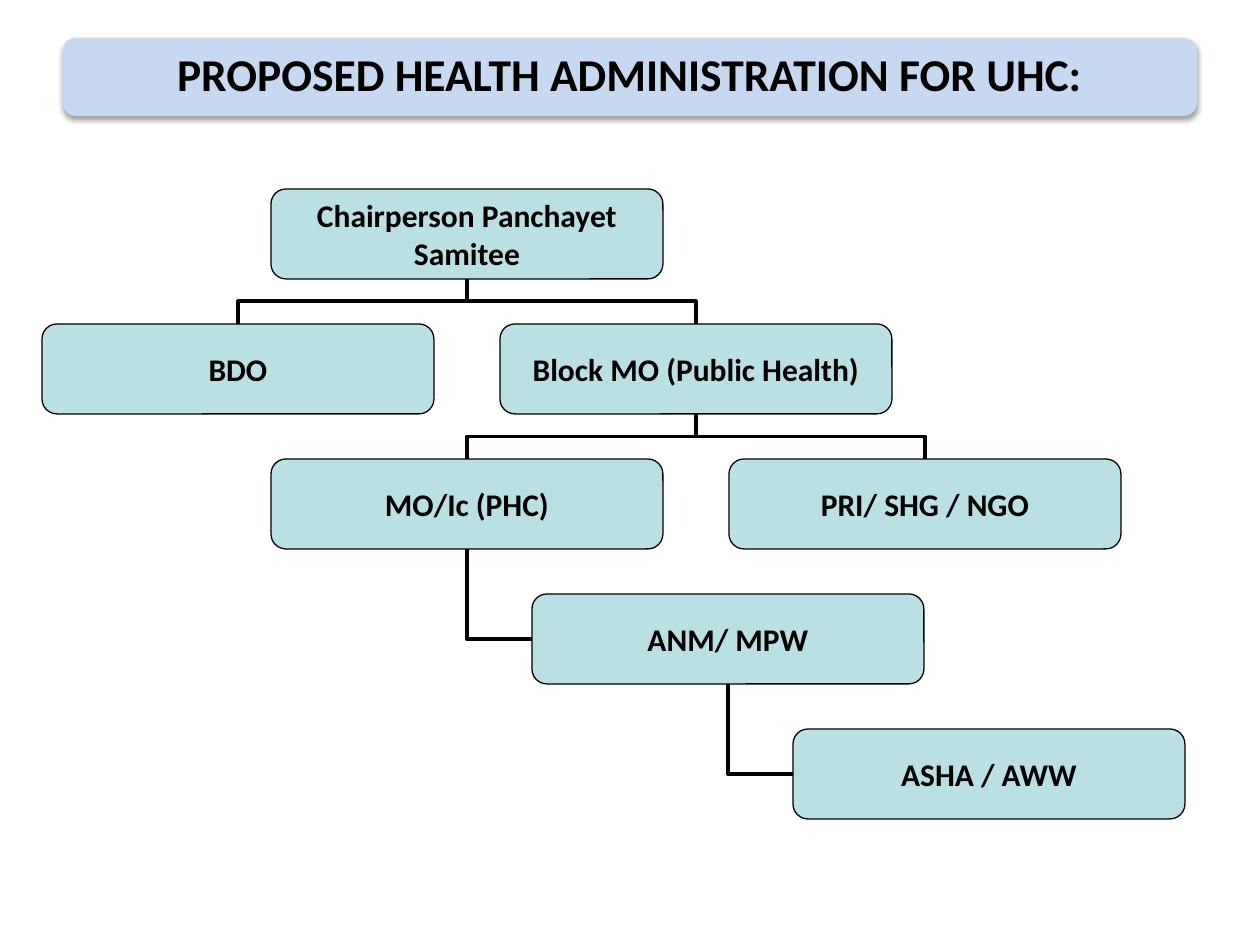
import dataclasses

import lxml.etree
import pptx
import pptx.dml.color
import pptx.enum.shapes
import pptx.enum.text
import pptx.oxml.ns
import pptx.util

EMU_PER_PX = 914400 / 126


@dataclasses.dataclass(frozen=True)
class Theme:
    font: str = "Calibri"
    ink: str = "000000"
    banner: str = "C6D9F1"
    role: str = "BBE0E3"
    title_size: int = 26
    role_size: int = 18
    outline: float = 0.75
    link: float = 2.25


THEME = Theme()
ROLE_WIDTH, ROLE_HEIGHT = 392, 90
FIRST_LEFT, COLUMN_STEP = 42, 229
FIRST_TOP, ROW_STEP = 189, 135
HANGING_INDENT = ROLE_WIDTH // 2 + 65
MIDDLE_COLUMN = FIRST_LEFT + COLUMN_STEP

ROLES = [
    ("Chairperson Panchayet Samitee", MIDDLE_COLUMN, 0),
    ("BDO", FIRST_LEFT, 1),
    ("Block MO (Public Health)", FIRST_LEFT + 2 * COLUMN_STEP, 1),
    ("MO/Ic (PHC)", MIDDLE_COLUMN, 2),
    ("PRI/ SHG / NGO", FIRST_LEFT + 3 * COLUMN_STEP, 2),
    ("ANM/ MPW", MIDDLE_COLUMN + HANGING_INDENT, 3),
    ("ASHA / AWW", MIDDLE_COLUMN + 2 * HANGING_INDENT, 4),
]
BRANCHES = [
    ("Chairperson Panchayet Samitee", "BDO"),
    ("Chairperson Panchayet Samitee", "Block MO (Public Health)"),
    ("Block MO (Public Health)", "MO/Ic (PHC)"),
    ("Block MO (Public Health)", "PRI/ SHG / NGO"),
]
HANGING = [("MO/Ic (PHC)", "ANM/ MPW"), ("ANM/ MPW", "ASHA / AWW")]


def px(length):
    return pptx.util.Emu(round(length * EMU_PER_PX))


def color(value):
    return pptx.dml.color.RGBColor.from_string(value)


def write(shape, text, size, inset):
    frame = shape.text_frame
    frame.text = text
    frame.word_wrap = True
    frame.auto_size = pptx.enum.text.MSO_AUTO_SIZE.NONE
    frame.vertical_anchor = pptx.enum.text.MSO_ANCHOR.MIDDLE
    frame.margin_left = frame.margin_right = px(inset)
    frame.margin_top = frame.margin_bottom = px(inset)
    paragraph = frame.paragraphs[0]
    paragraph.alignment = pptx.enum.text.PP_ALIGN.CENTER
    font = paragraph.runs[0].font
    font.name = THEME.font
    font.size = pptx.util.Pt(size)
    font.bold = True
    font.color.rgb = color(THEME.ink)


def add_panel(slide, left, top, width, height, fill):
    panel = slide.shapes.add_shape(
        pptx.enum.shapes.MSO_SHAPE.ROUNDED_RECTANGLE,
        px(left), px(top), px(width), px(height))
    panel.shadow.inherit = False
    panel.fill.solid()
    panel.fill.fore_color.rgb = color(fill)
    return panel


def add_banner_shadow(banner):
    tag = pptx.oxml.ns.qn
    effects = banner._element.spPr.find(tag("a:effectLst"))
    shadow = lxml.etree.SubElement(
        effects, tag("a:outerShdw"), blurRad=str(pptx.util.Pt(3.1)),
        dist=str(pptx.util.Pt(1.6)), dir="5400000", rotWithShape="0")
    tint = lxml.etree.SubElement(shadow, tag("a:srgbClr"), val=THEME.ink)
    lxml.etree.SubElement(tint, tag("a:alpha"), val="38000")


def add_title(slide, text):
    banner = add_panel(slide, 63, 38, 1134, 78, THEME.banner)
    banner.line.fill.background()
    add_banner_shadow(banner)
    title = slide.shapes.title
    title._element.addprevious(banner._element)
    title.left, title.top, title.width, title.height = map(px, (67, 42, 1126, 70))
    write(title, text, THEME.title_size, 14)
    title.text_frame.paragraphs[0].line_spacing = 0.9


def add_role(slide, text, left, row):
    role = add_panel(slide, left, FIRST_TOP + row * ROW_STEP,
                     ROLE_WIDTH, ROLE_HEIGHT, THEME.role)
    role.line.color.rgb = color(THEME.ink)
    role.line.width = pptx.util.Pt(THEME.outline)
    write(role, text, THEME.role_size, 0)
    return role


def add_link(slide, parent, child, hanging=False):
    link = slide.shapes.add_connector(
        pptx.enum.shapes.MSO_CONNECTOR.ELBOW, 0, 0, 0, 0)
    link.begin_connect(parent, 2)
    link.end_connect(child, 1 if hanging else 0)
    start_x, start_y = link.begin_x, link.begin_y
    end_x, end_y = link.end_x, link.end_y
    drop, reach = end_y - start_y, abs(end_x - start_x)
    link.left = (start_x + end_x - drop) // 2
    link.top = (start_y + end_y - reach) // 2
    link.width, link.height = drop, reach
    properties = link._element.spPr
    goes_right = end_x > start_x
    properties.xfrm.rot = 270 if goes_right else 90
    properties.xfrm.flipH = goes_right
    properties.xfrm.flipV = False
    if hanging:
        properties.find(pptx.oxml.ns.qn("a:prstGeom")).set("prst", "bentConnector2")
    link.line.color.rgb = color(THEME.ink)
    link.line.width = pptx.util.Pt(THEME.link)
    lxml.etree.SubElement(properties, pptx.oxml.ns.qn("a:effectLst"))


def main():
    deck = pptx.Presentation()
    deck.slide_width, deck.slide_height = px(1260), px(945)
    slide = deck.slides.add_slide(deck.slide_layouts[5])
    add_title(slide, "PROPOSED HEALTH ADMINISTRATION FOR UHC:")
    roles = {text: add_role(slide, text, left, row) for text, left, row in ROLES}
    for parent, child in BRANCHES:
        add_link(slide, roles[parent], roles[child])
    for parent, child in HANGING:
        add_link(slide, roles[parent], roles[child], hanging=True)
    deck.save("out.pptx")


if __name__ == "__main__":
    main()
